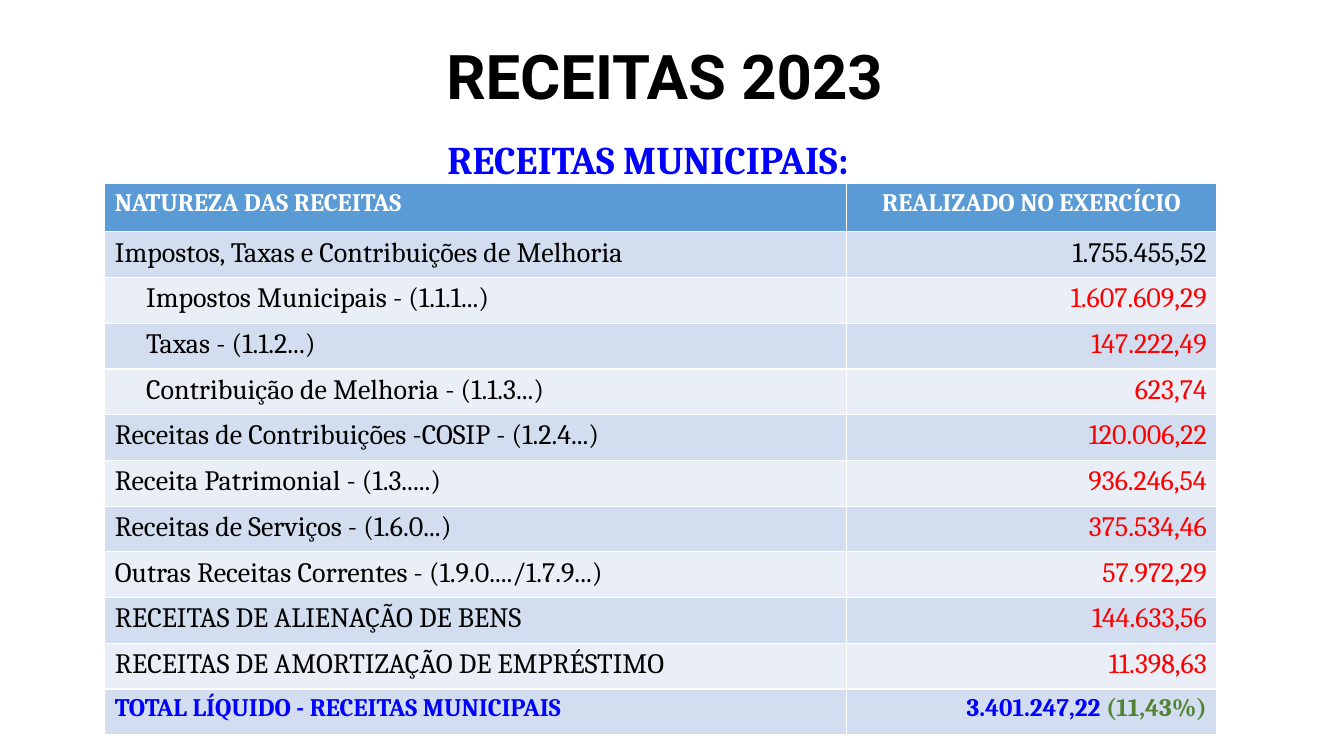
from dataclasses import dataclass

from pptx import Presentation
from pptx.dml.color import RGBColor
from pptx.enum.text import MSO_ANCHOR as Anchor, MSO_AUTO_SIZE as AutoSize, PP_ALIGN as Align
from pptx.util import Pt
from pptx.oxml.ns import qn
from lxml.etree import SubElement

EMU_PER_PX = 9144


@dataclass(frozen=True)
class Theme:
    title_font: str = "Roboto"
    body_font: str = "Cambria"
    title_size: int = 44
    subtitle_size: int = 28
    row_size: int = 20
    strong_size: int = 18
    black: str = "000000"
    white: str = "FFFFFF"
    blue: str = "0000FF"
    red: str = "FF0000"
    green: str = "548235"
    header_fill: str = "5B9BD5"
    bands: tuple = ("D2DEEF", "EAEFF7")


THEME = Theme()

HEADER = ("NATUREZA DAS RECEITAS", "REALIZADO NO EXERCÍCIO")
REVENUES = [
    ("Impostos, Taxas e Contribuições de Melhoria", "1.755.455,52", 0),
    ("Impostos Municipais - (1.1.1...)", "1.607.609,29", 1),
    ("Taxas - (1.1.2...)", "147.222,49", 1),
    ("Contribuição de Melhoria - (1.1.3...)", "623,74", 1),
    ("Receitas de Contribuições -COSIP - (1.2.4...)", "120.006,22", 0),
    ("Receita Patrimonial - (1.3.....)", "936.246,54", 0),
    ("Receitas de Serviços - (1.6.0...)", "375.534,46", 0),
    ("Outras Receitas Correntes - (1.9.0..../1.7.9...)", "57.972,29", 0),
    ("RECEITAS DE ALIENAÇÃO DE BENS", "144.633,56", 0),
    ("RECEITAS DE AMORTIZAÇÃO DE EMPRÉSTIMO", "11.398,63", 0),
]
TOTAL = ("TOTAL LÍQUIDO - RECEITAS MUNICIPAIS", "3.401.247,22 ", "(11,43%)")


def px(length):
    return length * EMU_PER_PX


def add_run(paragraph, text, size, color, bold=False, font=THEME.body_font):
    run = paragraph.add_run()
    run.text = text
    run.font.name = font
    run.font.size = Pt(size)
    run.font.bold = bold
    run.font.color.rgb = RGBColor.from_string(color)


def place_heading(shape, box, anchor):
    shape.left, shape.top, shape.width, shape.height = map(px, box)
    frame = shape.text_frame
    frame.word_wrap = True
    frame.auto_size = AutoSize.NONE
    frame.vertical_anchor = anchor
    paragraph = frame.paragraphs[0]
    paragraph.alignment = Align.CENTER
    paragraph.line_spacing = 0.9
    return paragraph


def fill_title(shape, box):
    paragraph = place_heading(shape, box, Anchor.MIDDLE)
    add_run(paragraph, "RECEITAS 2023 ", THEME.title_size, THEME.black, True, THEME.title_font)


def fill_subtitle(shape, box):
    paragraph = place_heading(shape, box, Anchor.TOP)
    paragraph.space_before = Pt(10)
    properties = paragraph._p.get_or_add_pPr()
    properties.set("marL", "0")
    properties.set("indent", "0")
    SubElement(properties, qn("a:buNone"))
    add_run(paragraph, "RECEITAS MUNICIPAIS: ", THEME.subtitle_size, THEME.blue, True)


def fill_cell(cell, fill, alignment, runs, level=0):
    cell.fill.solid()
    cell.fill.fore_color.rgb = RGBColor.from_string(fill)
    paragraph = cell.text_frame.paragraphs[0]
    paragraph.alignment = alignment
    if level:
        paragraph._p.get_or_add_pPr().set("marL", str(px(31 * level)))
    for run in runs:
        add_run(paragraph, *run)


def add_revenue_table(slide, box):
    left, top, width, height = map(px, box)
    row_count = len(REVENUES) + 2
    table = slide.shapes.add_table(row_count, 2, left, top, width, height).table
    table.columns[0].width = width * 2 // 3
    table.columns[1].width = width - table.columns[0].width
    header_height = px(48)
    for index, row in enumerate(table.rows):
        row.height = (height - header_height) // (row_count - 1) if index else header_height

    for column, alignment in enumerate((Align.LEFT, Align.CENTER)):
        header_run = (HEADER[column], THEME.strong_size, THEME.white, True)
        fill_cell(table.cell(0, column), THEME.header_fill, alignment, [header_run])

    for index, (name, amount, level) in enumerate(REVENUES):
        fill = THEME.bands[index % 2]
        amount_color = THEME.red if index else THEME.black
        name_run = (name, THEME.row_size, THEME.black)
        amount_run = (amount, THEME.row_size, amount_color)
        fill_cell(table.cell(index + 1, 0), fill, Align.LEFT, [name_run], level)
        fill_cell(table.cell(index + 1, 1), fill, Align.RIGHT, [amount_run])

    name_run, amount_run, share_run = [
        (text, THEME.strong_size, color, True)
        for text, color in zip(TOTAL, (THEME.blue, THEME.blue, THEME.green))
    ]
    last = row_count - 1
    fill = THEME.bands[len(REVENUES) % 2]
    fill_cell(table.cell(last, 0), fill, Align.LEFT, [name_run])
    fill_cell(table.cell(last, 1), fill, Align.RIGHT, [amount_run, share_run])


def build_revenue_slide(presentation):
    slide = presentation.slides.add_slide(presentation.slide_layouts[1])
    slide.background.fill.solid()
    slide.background.fill.fore_color.rgb = RGBColor.from_string(THEME.white)
    fill_title(slide.shapes.title, (92, 23, 1150, 111))
    fill_subtitle(slide.placeholders[1], (92, 134, 1110, 62))
    add_revenue_table(slide, (104, 182, 1103, 547))


def main():
    presentation = Presentation()
    presentation.slide_width = px(1333)
    presentation.slide_height = px(750)
    build_revenue_slide(presentation)
    presentation.save("out.pptx")


if __name__ == "__main__":
    main()
